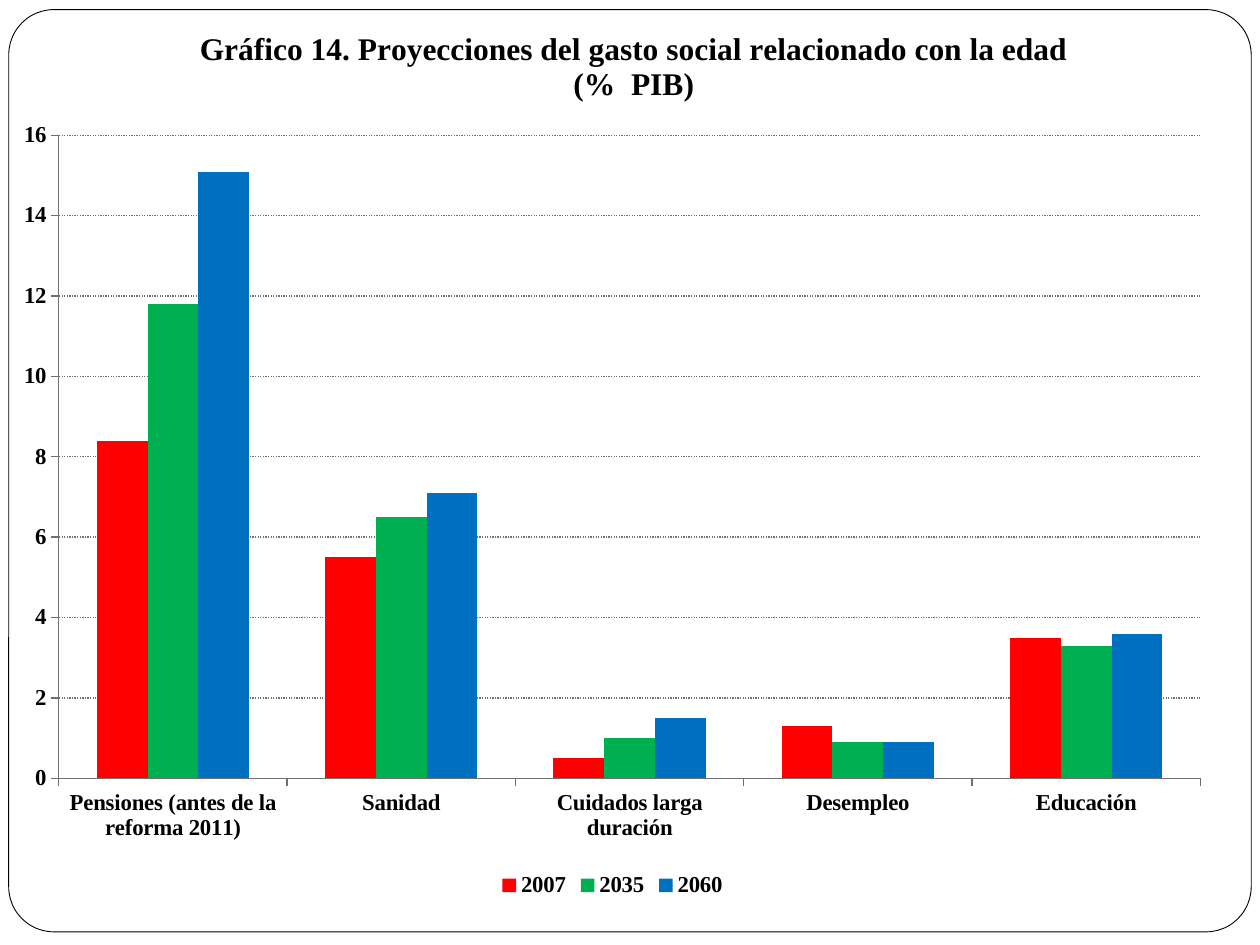
from pptx import Presentation
from pptx.chart.data import CategoryChartData
from pptx.dml.color import RGBColor
from pptx.enum.chart import XL_CHART_TYPE as ChartType, XL_LEGEND_POSITION as LegendPos
from pptx.enum.chart import XL_TICK_MARK as TickMark
from pptx.enum.dml import MSO_LINE as LineStyle
from pptx.enum.shapes import MSO_SHAPE as Shape
from pptx.oxml import parse_xml
from pptx.oxml.ns import nsdecls
from pptx.util import Pt

BLACK = RGBColor(0x00, 0x00, 0x00)
WHITE = RGBColor(0xFF, 0xFF, 0xFF)
GRAY = RGBColor(0x70, 0x70, 0x70)
RED = RGBColor(0xFF, 0x00, 0x00)
GREEN = RGBColor(0x00, 0xB0, 0x50)
BLUE = RGBColor(0x00, 0x70, 0xC0)

FONT = "Times New Roman"
TITLE = ("Gráfico 14. Proyecciones del gasto social relacionado con la edad",
         "(%  PIB)")
CATEGORIES = ("Pensiones (antes de la reforma 2011)", "Sanidad",
              "Cuidados larga duración", "Desempleo", "Educación")
SERIES = (
    ("2007", (8.4, 5.5, 0.5, 1.3, 3.5), RED),
    ("2035", (11.8, 6.5, 1, 0.9, 3.3), GREEN),
    ("2060", (15.1, 7.1, 1.5, 0.9, 3.6), BLUE),
)


def set_font(font, size):
    font.name = FONT
    font.size = Pt(size)
    font.bold = True
    font.color.rgb = BLACK


def set_layout(parent, target="", **fractions):
    """Place a chart part by fractions of the chart's size."""
    parts = f'<c:layoutTarget val="{target}"/>' if target else ""
    parts += "".join(f'<c:{k}Mode val="edge"/>' for k in fractions if k in "xy")
    parts += "".join(f'<c:{k} val="{v}"/>' for k, v in fractions.items())
    for old in parent.findall("{*}layout"):
        parent.remove(old)
    layout = parse_xml(f'<c:layout {nsdecls("c")}><c:manualLayout>{parts}'
                       '</c:manualLayout></c:layout>')
    # The layout follows the title's text, and comes first in the plot area
    parent.insert(1 if parent.tag.endswith("}title") else 0, layout)


def add_frame(slide):
    s = slide.shapes.add_shape(Shape.ROUNDED_RECTANGLE, Pt(5), Pt(5.5), Pt(710), Pt(527))
    s.adjustments[0] = 0.049
    s.shadow.inherit = False
    s.fill.solid()
    s.fill.fore_color.rgb = WHITE
    s.line.color.rgb = BLACK
    s.line.width = Pt(0.5)


def add_title(chart):
    tf = chart.chart_title.text_frame
    tf.text = "\n".join(TITLE)
    for p in tf.paragraphs:
        set_font(p.font, 18)
    chart.chart_title.include_in_layout = False
    set_layout(chart.chart_title._element, x=0.16, y=0.03)


def style_axis(axis):
    axis.major_tick_mark = TickMark.OUTSIDE
    axis.minor_tick_mark = TickMark.NONE
    axis.format.line.color.rgb = GRAY
    axis.format.line.width = Pt(0.75)
    set_font(axis.tick_labels.font, 13)


def style_value_axis(axis):
    style_axis(axis)
    axis.minimum_scale, axis.maximum_scale, axis.major_unit = 0, 16, 2
    axis.tick_labels.number_format = "0"
    axis.tick_labels.number_format_is_linked = False
    line = axis.major_gridlines.format.line
    line.color.rgb = GRAY
    line.width = Pt(0.75)
    line.dash_style = LineStyle.ROUND_DOT


def add_chart(slide):
    data = CategoryChartData()
    data.categories = CATEGORIES
    for name, values, _ in SERIES:
        data.add_series(name, values)
    chart = slide.shapes.add_chart(ChartType.COLUMN_CLUSTERED, 0, 0,
                                   Pt(700), Pt(516), data).chart
    chart.font.name = FONT
    chart.font.size = Pt(10)
    chart.font.color.rgb = BLACK
    add_title(chart)

    # Columns
    plot = chart.plots[0]
    plot.gap_width = 150
    plot.overlap = 0
    plot.vary_by_categories = False
    for series, (_, _, color) in zip(plot.series, SERIES):
        series.format.fill.solid()
        series.format.fill.fore_color.rgb = color
    set_layout(chart._chartSpace.chart.plotArea, "inner",
               x=0.048, y=0.15, w=0.932, h=0.712)

    # Axes and legend
    style_axis(chart.category_axis)
    style_value_axis(chart.value_axis)
    chart.has_legend = True
    chart.legend.position = LegendPos.BOTTOM
    chart.legend.include_in_layout = False
    set_font(chart.legend.font, 13)


def main():
    prs = Presentation()
    prs.slide_width, prs.slide_height = Pt(720), Pt(540)
    slide = prs.slides.add_slide(prs.slide_layouts[6])
    add_frame(slide)
    add_chart(slide)
    prs.save("out.pptx")


if __name__ == "__main__":
    main()
